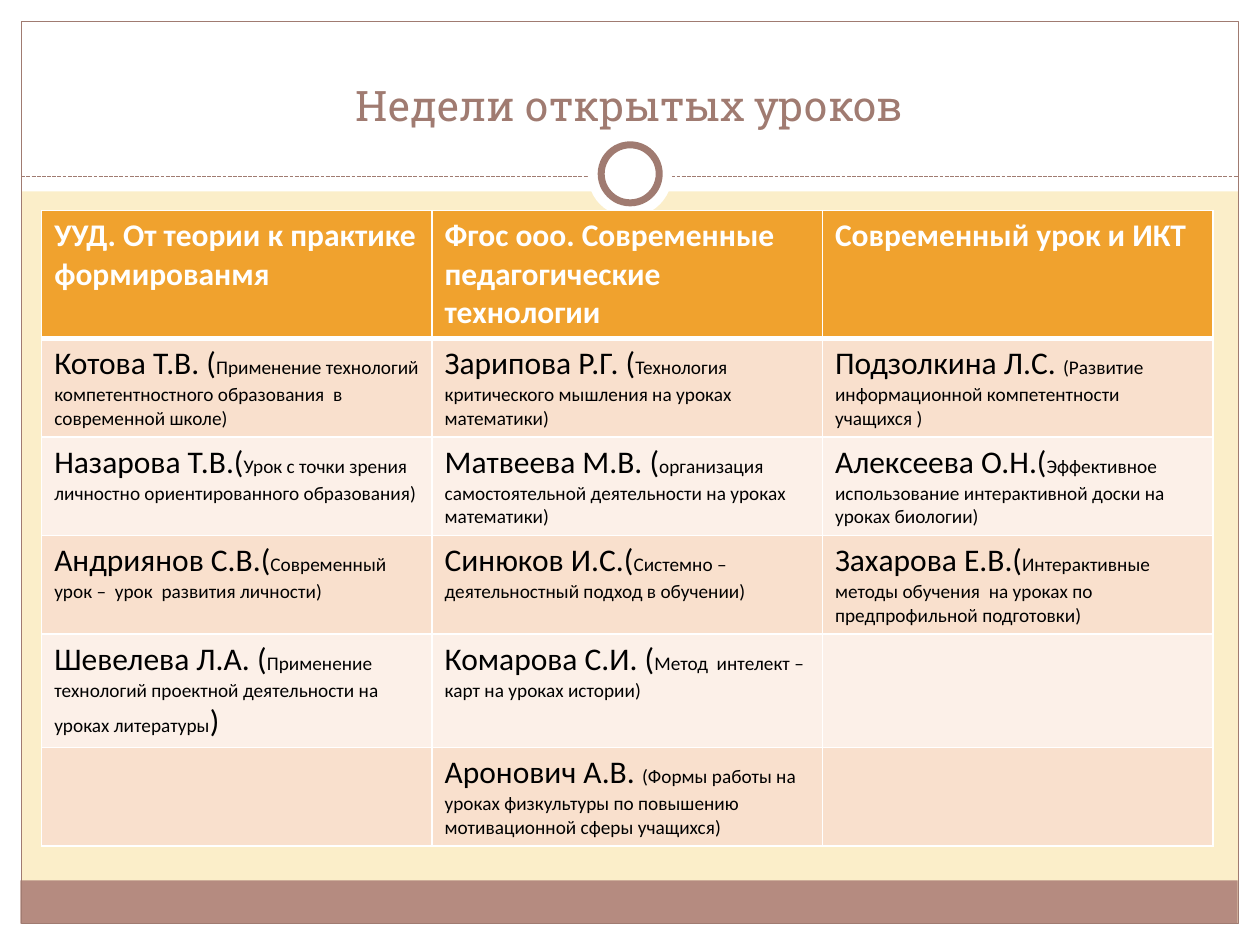
from lxml import etree
from pptx import Presentation
from pptx.dml.color import RGBColor
from pptx.enum import dml, shapes, text
from pptx.oxml import ns
from pptx.util import Cm, Pt

COLORS = {"cream": "FBEEC9", "white": "FFFFFF", "band": "B58B80", "brown": "A07B71",
          "header": "F0A22E", "odd": "F9E0CD", "even": "FCF0E8", "black": "000000"}


def rgb(name):
    return RGBColor.from_string(COLORS[name])


def add_text(p, content, size=18, color="black", font="Calibri", bold=False):
    r = p.add_run()
    r.text = content
    r.font.size = Pt(size)
    r.font.name = font
    r.font.bold = bold
    r.font.color.rgb = rgb(color)


prs = Presentation()
prs.slide_width, prs.slide_height = Cm(25.4), Cm(19.05)
s = prs.slides.add_slide(prs.slide_layouts[5])
s.background.fill.solid()
s.background.fill.fore_color.rgb = rgb("cream")

# Frame: white margins, bottom band, outline, dashed rule and ring
RECT, OVAL = shapes.MSO_SHAPE.RECTANGLE, shapes.MSO_SHAPE.OVAL
frame = [  # kind, left, top, width, height, fill, line width
    (RECT, 0, 18.62, 25.4, 0.43, "white", 0),
    (RECT, 0, 0, 25.4, 3.86, "white", 0),
    (RECT, 0, 0, 0.43, 19.05, "white", 0),
    (RECT, 24.97, 0, 0.43, 19.05, "white", 0),
    (RECT, 0.41, 17.75, 24.54, 0.87, "band", 0),
    (RECT, 0.43, 0.43, 24.54, 18.19, None, 0.75),
    (None, 0.43, 3.56, 24.54, 0, None, 0.75),
    (OVAL, 11.85, 2.67, 1.7, 1.7, "white", 0),
    (OVAL, 12.12, 2.92, 1.17, 1.17, "white", 4),
]
for kind, x, y, w, h, fill, line in frame:
    if kind is None:
        sp = s.shapes.add_connector(shapes.MSO_CONNECTOR.STRAIGHT,
                                    Cm(x), Cm(y), Cm(x + w), Cm(y + h))
        etree.SubElement(sp._element.spPr, ns.qn("a:effectLst"))
        sp.line.dash_style = dml.MSO_LINE.SQUARE_DOT
    else:
        sp = s.shapes.add_shape(kind, Cm(x), Cm(y), Cm(w), Cm(h))
        sp.shadow.inherit = False
        if fill:
            sp.fill.solid()
            sp.fill.fore_color.rgb = rgb(fill)
        else:
            sp.fill.background()
    if line:
        sp.line.color.rgb = rgb("brown")
        sp.line.width = Pt(line)
    else:
        sp.line.fill.background()

# Title, brought in front of the frame
title = s.shapes.title
s.shapes._spTree.append(title._element)
title.left, title.top, title.width, title.height = Cm(0.84), Cm(0.64), Cm(23.7), Cm(2.11)
tf = title.text_frame
tf.vertical_anchor = text.MSO_ANCHOR.BOTTOM
p = tf.paragraphs[0]
p.alignment = text.PP_ALIGN.CENTER
add_text(p, "Недели открытых уроков", size=24, color="brown", font="Roboto Slab")

# Table content: header texts, then teacher, topic and closing mark
headers = ["УУД. От теории к практике формированмя",
           "Фгос ооо. Современные педагогические технологии",
           "Современный урок и ИКТ"]
lessons = [
    [("Котова Т.В. (", "Применение технологий компетентностного образования  в современной школе)"),
     ("Зарипова Р.Г. (", "Технология критического мышления на уроках математики)"),
     ("Подзолкина Л.С. ", "(Развитие информационной компетентности учащихся )")],
    [("Назарова Т.В.(", "Урок с точки зрения личностно ориентированного образования)"),
     ("Матвеева М.В. (", "организация самостоятельной деятельности на уроках математики)"),
     ("Алексеева О.Н.(", "Эффективное использование интерактивной доски на уроках биологии)")],
    [("Андриянов С.В.(", "Современный урок –  урок  развития личности)"),
     ("Синюков И.С.(", "Системно – деятельностный подход в обучении)"),
     ("Захарова Е.В.(", "Интерактивные методы обучения  на уроках по предпрофильной подготовки)")],
    [("Шевелева Л.А. (", "Применение технологий проектной деятельности на уроках литературы", ")"),
     ("Комарова С.И. (", "Метод  интелект – карт на уроках истории)"),
     ()],
    [(),
     ("Аронович А.В. ", "(Формы работы на уроках физкультуры по повышению мотивационной сферы учащихся)"),
     ()],
]
rows = [[(h,) for h in headers]] + lessons
heights = [2.54, 1.96, 1.96, 1.96, 2.2, 1.96]

# Table
tbl = s.shapes.add_table(len(rows), len(headers), Cm(0.84), Cm(4.24),
                         Cm(23.62), Cm(sum(heights))).table
tbl.horz_banding = False
for col in tbl.columns:
    col.width = Cm(7.87)
for i, row in enumerate(rows):
    tbl.rows[i].height = Cm(heights[i])
    for j, parts in enumerate(row):
        cell = tbl.cell(i, j)
        tcPr = cell._tc.get_or_add_tcPr()
        for side in "LRTB":
            thick = (i, side) in [(0, "B"), (1, "T")]
            ln = etree.SubElement(tcPr, ns.qn("a:ln" + side), w=str(Pt(3 if thick else 1)))
            solid = etree.SubElement(ln, ns.qn("a:solidFill"))
            etree.SubElement(solid, ns.qn("a:srgbClr"), val=COLORS["white"])
        cell.fill.solid()
        cell.fill.fore_color.rgb = rgb("header" if i == 0 else "odd" if i % 2 else "even")
        p = cell.text_frame.paragraphs[0]
        for k, part in enumerate(parts):
            add_text(p, part, size=11 if k == 1 else 18,
                     color="black" if i else "white", bold=i == 0)

prs.save("out.pptx")
